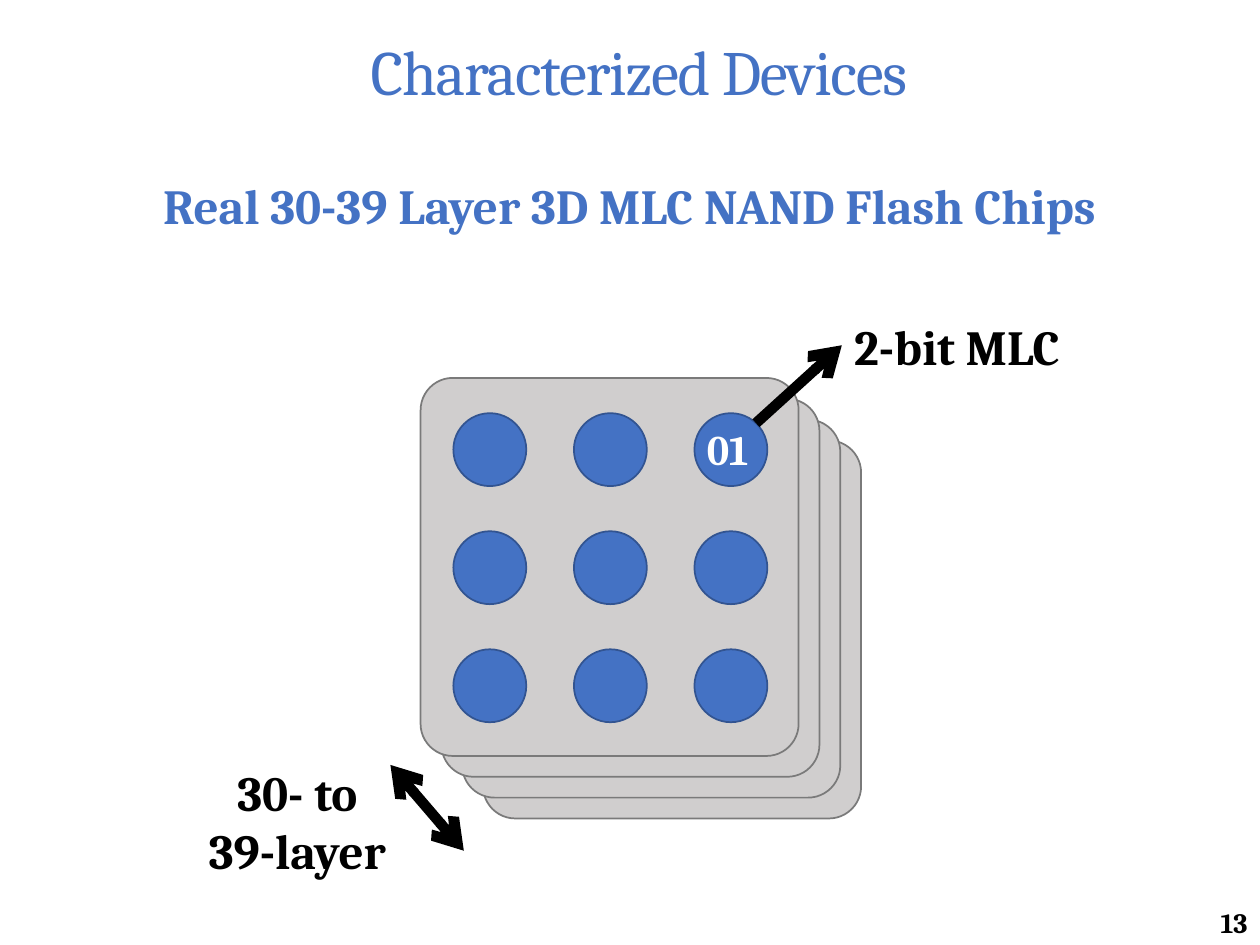
from lxml import etree
from pptx import Presentation
from pptx import util as u
from pptx.dml.color import RGBColor
from pptx.enum import shapes, text
from pptx.oxml.ns import qn

BLUE = RGBColor(0x44, 0x72, 0xC4)
DARK_BLUE = RGBColor(0x32, 0x54, 0x91)
LIGHT_GRAY = RGBColor(0xD0, 0xCE, 0xCE)
GRAY = RGBColor(0x7A, 0x7A, 0x7A)
BLACK = RGBColor(0, 0, 0)
WHITE = RGBColor(0xFF, 0xFF, 0xFF)
LEFT, CENTER, RIGHT = text.PP_ALIGN.LEFT, text.PP_ALIGN.CENTER, text.PP_ALIGN.RIGHT
TOP, MIDDLE, BOTTOM = text.MSO_ANCHOR.TOP, text.MSO_ANCHOR.MIDDLE, text.MSO_ANCHOR.BOTTOM

presentation = Presentation()
presentation.slide_width = u.Cm(25.4)
presentation.slide_height = u.Cm(19.05)
slide = presentation.slides.add_slide(presentation.slide_layouts[6])


def add_filled(kind, left, top, size, fill, line):
    shape = slide.shapes.add_shape(kind, u.Cm(left), u.Cm(top), u.Cm(size), u.Cm(size))
    shape.shadow.inherit = False
    shape.fill.solid()
    shape.fill.fore_color.rgb = fill
    shape.line.color.rgb = line
    shape.line.width = u.Pt(1)
    return shape


def add_label(words, box, size, color, bold=True, align=LEFT, anchor=TOP, wrap=True):
    shape = slide.shapes.add_textbox(*[u.Cm(length) for length in box])
    shape.text_frame.word_wrap = wrap
    shape.text_frame.vertical_anchor = anchor
    paragraph = shape.text_frame.paragraphs[0]
    paragraph.text = words
    paragraph.alignment = align
    paragraph.font.name = "Cambria"
    paragraph.font.size = u.Pt(size)
    paragraph.font.bold = bold
    paragraph.font.color.rgb = color
    return paragraph


title = add_label("Characterized Devices", (0, 0, 25.4, 3.02), 36, BLUE, False, CENTER, MIDDLE)
title.line_spacing = 0.9
title._p.get_or_add_pPr().set("marL", str(u.Cm(0.36)))
title.runs[0].font._element.set("spc", "-70")

add_label("Real 30-39 Layer 3D MLC NAND Flash Chips", (1.37, 3.15, 22.63, 1.98),
          28, BLUE, align=CENTER, anchor=MIDDLE)

for layer in (3, 2, 1, 0):
    card = add_filled(shapes.MSO_SHAPE.ROUNDED_RECTANGLE, 8.48 + layer * 0.42,
                      7.62 + layer * 0.42, 7.62, LIGHT_GRAY, GRAY)
    card.adjustments[0] = 0.085

for column in range(3):
    for row in range(3):
        add_filled(shapes.MSO_SHAPE.OVAL, 9.14 + column * 2.43, 8.33 + row * 2.38,
                   1.47, BLUE, DARK_BLUE)

arrows = [
    ((7.87, 15.42, 9.35, 17.15), ("headEnd", "tailEnd")),
    ((15.24, 8.53, 16.97, 6.96), ("tailEnd",)),
]
for points, ends in arrows:
    arrow = slide.shapes.add_connector(
        shapes.MSO_CONNECTOR.STRAIGHT, *[u.Cm(point) for point in points])
    arrow.line.color.rgb = BLACK
    arrow.line.width = u.Pt(6)
    for end in ends:
        etree.SubElement(arrow.line._get_or_add_ln(), qn("a:" + end), type="arrow")
    etree.SubElement(arrow._element.spPr, qn("a:effectLst"))

add_label("2-bit MLC", (16.97, 6.25, 4.88, 1.45), 28, BLACK, wrap=False)
add_label("30- to 39-layer", (3.81, 15.24, 4.37, 2.64), 28, BLACK, align=CENTER)
add_label("01", (14, 8.41, 1.52, 1.27), 24, WHITE, wrap=False)
add_label("13", (22.76, 18.11, 2.64, 0.94), 16, BLACK, align=RIGHT, anchor=BOTTOM)

presentation.save("out.pptx")
